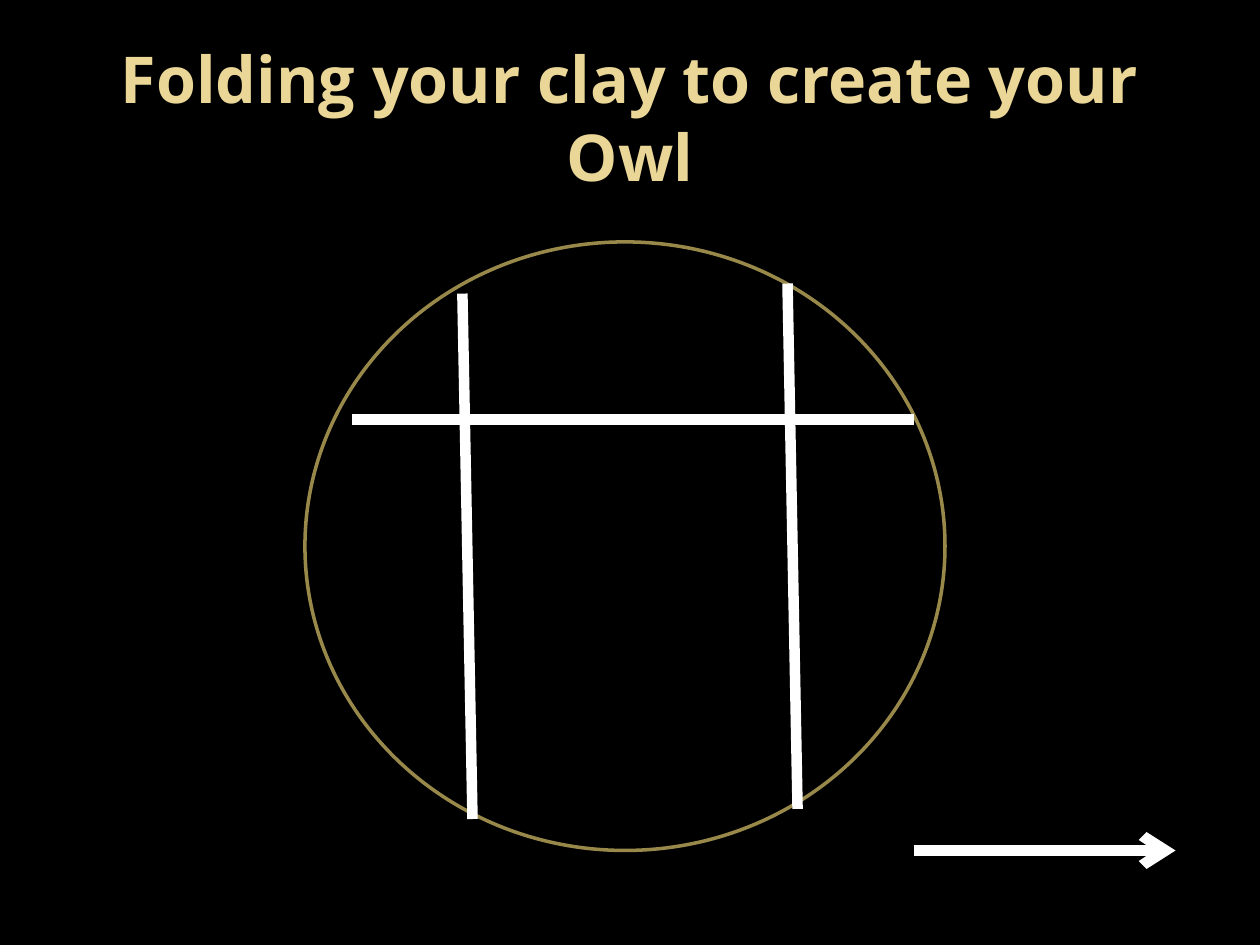
from dataclasses import dataclass

import pptx
import pptx.dml.color
import pptx.enum.shapes
import pptx.enum.text
import pptx.oxml
import pptx.oxml.ns
import pptx.util
from pptx.util import Inches

BLACK = "000000"
WHITE = "FFFFFF"
GOLD = "98894B"
CREAM = "EAD696"


@dataclass(frozen=True)
class Line:
    start: tuple[float, float]
    end: tuple[float, float]
    arrow: bool = False


LINES = [
    Line((3.67, 2.33), (3.75, 6.5)),
    Line((6.25, 2.25), (6.33, 6.42)),
    Line((2.79, 3.33), (7.25, 3.33)),
    Line((7.25, 6.75), (9.33, 6.75), arrow=True),
]


def color(value: str) -> pptx.dml.color.RGBColor:
    return pptx.dml.color.RGBColor.from_string(value)


def add_title(slide, text: str) -> None:
    box = slide.shapes.add_textbox(Inches(0.5), Inches(0.3), Inches(9), Inches(1.25))
    text_frame = box.text_frame
    text_frame.word_wrap = True
    text_frame.vertical_anchor = pptx.enum.text.MSO_ANCHOR.MIDDLE
    text_frame.text = text
    paragraph = text_frame.paragraphs[0]
    paragraph.alignment = pptx.enum.text.PP_ALIGN.CENTER
    font = paragraph.runs[0].font
    font.name = "Open Sans"
    font.size = pptx.util.Pt(36.9)
    font.bold = True
    font.color.rgb = color(CREAM)


def add_clay(slide) -> None:
    clay = slide.shapes.add_shape(
        pptx.enum.shapes.MSO_SHAPE.OVAL,
        Inches(2.42), Inches(1.92), Inches(5.08), Inches(4.83),
    )
    clay.shadow.inherit = False
    clay.fill.solid()
    clay.fill.fore_color.rgb = color(BLACK)
    clay.line.color.rgb = color(GOLD)
    clay.line.width = pptx.util.Pt(2)


def add_line(slide, line: Line) -> None:
    connector = slide.shapes.add_connector(
        pptx.enum.shapes.MSO_CONNECTOR.STRAIGHT,
        *(Inches(length) for length in line.start + line.end),
    )
    connector.line.color.rgb = color(WHITE)
    connector.line.width = pptx.util.Pt(6)
    properties = connector._element.spPr
    if line.arrow:
        outline = properties.find(pptx.oxml.ns.qn("a:ln"))
        arrowhead = pptx.oxml.parse_xml(
            f'<a:tailEnd {pptx.oxml.ns.nsdecls("a")} type="arrow"/>'
        )
        outline.append(arrowhead)
    properties.append(
        pptx.oxml.parse_xml(f'<a:effectLst {pptx.oxml.ns.nsdecls("a")}/>')
    )


def main() -> None:
    presentation = pptx.Presentation()
    presentation.slide_width = Inches(10)
    presentation.slide_height = Inches(7.5)
    slide = presentation.slides.add_slide(presentation.slide_layouts[6])
    slide.background.fill.solid()
    slide.background.fill.fore_color.rgb = color(BLACK)
    add_title(slide, "Folding your clay to create your Owl")
    add_clay(slide)
    for line in LINES:
        add_line(slide, line)
    presentation.save("out.pptx")


if __name__ == "__main__":
    main()
